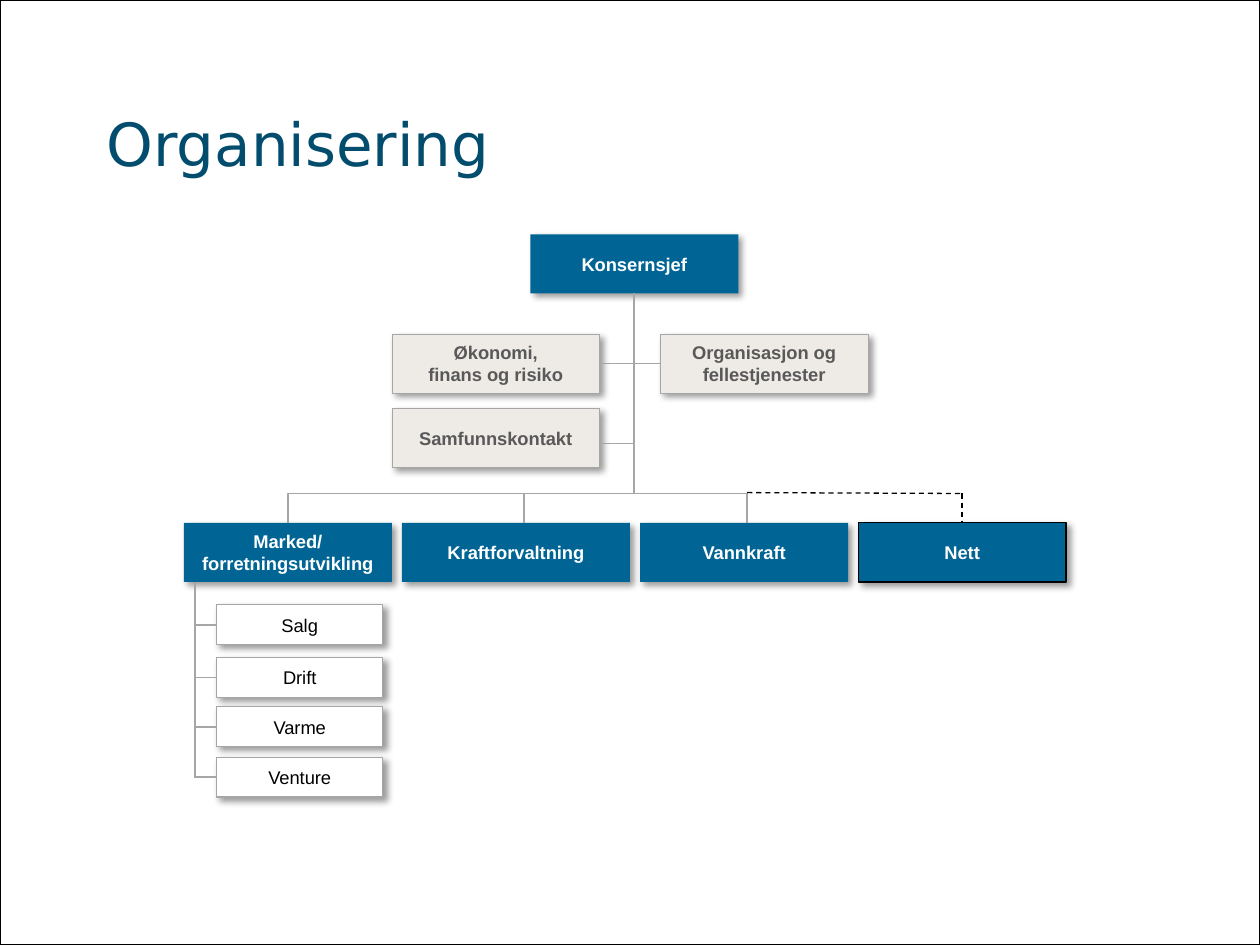
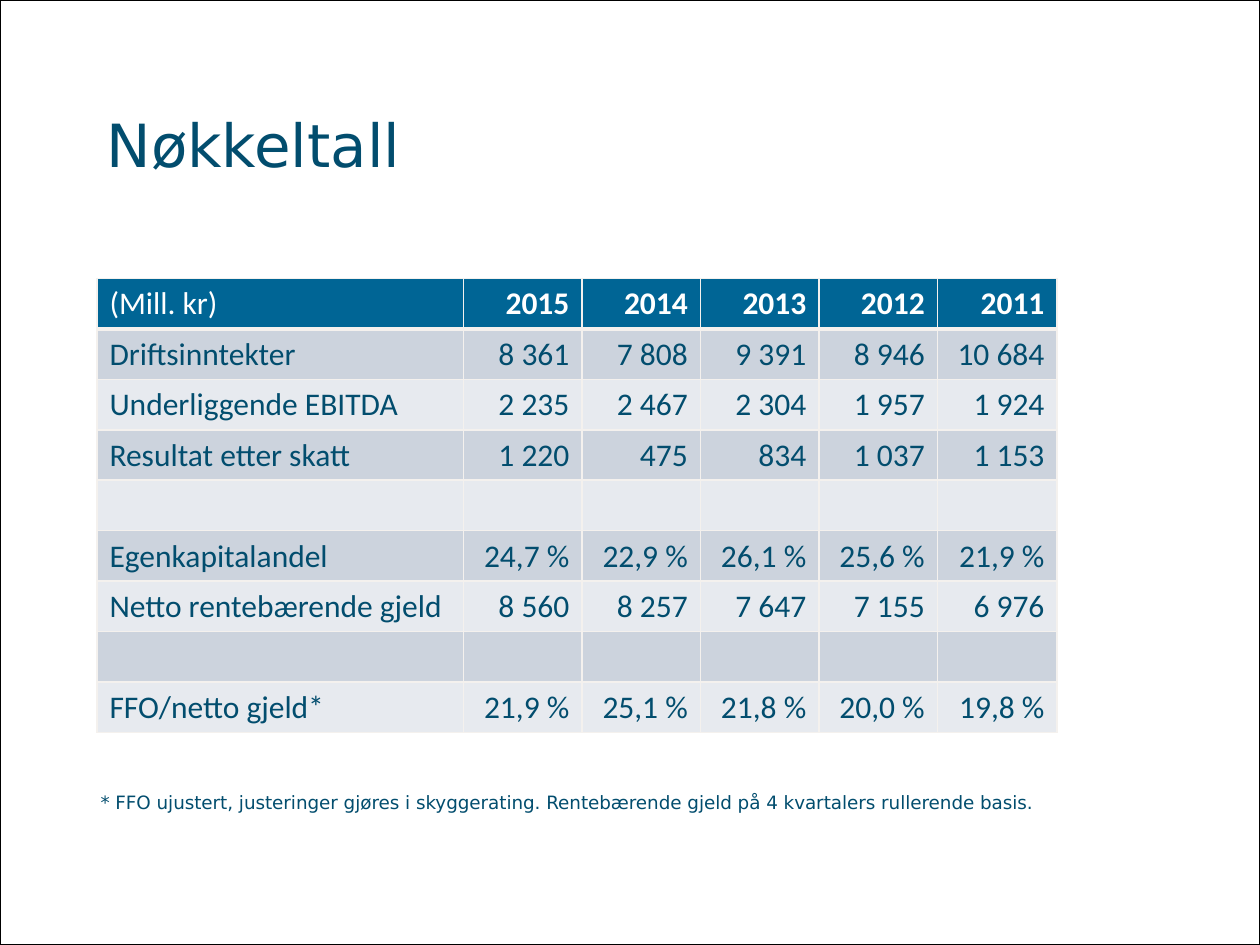
import pptx
import pptx.dml.color
import pptx.enum.dml
import pptx.enum.shapes
import pptx.enum.text
import pptx.oxml
import pptx.oxml.ns
import pptx.util

Pt = pptx.util.Pt
ALIGN = pptx.enum.text.PP_ALIGN
MIDDLE = pptx.enum.text.MSO_ANCHOR.MIDDLE
RECT = pptx.enum.shapes.MSO_SHAPE.RECTANGLE
KIND = pptx.enum.shapes.MSO_CONNECTOR
DASH = pptx.enum.dml.MSO_LINE.DASH
NS = pptx.oxml.ns.nsdecls("a")

BLUE, NAVY, WHITE, BLACK = "006595", "024D6E", "FFFFFF", "000000"
SAND, GREY, SLATE = "EEEBE6", "A6A6A6", "595959"
EDGE, BANDS = "F4F1EE", ("E7EAEF", "CCD3DD")
HEAD, BODY, CELL = "DejaVu Sans", "Arial", "Calibri"
TOP, LEFT, BOTTOM, RIGHT = range(4)

WIDE, HIGH, GAP = 118.8, 33.8, 5.8
RAIL = 111.6
BAR = 282

UNITS = [("Marked/\vforretningsutvikling", WIDE), ("Kraftforvaltning", 130.3),
         ("Vannkraft", WIDE), ("Nett", WIDE)]
FIRMS = [("Salg", 345.6), ("Drift", 375.8), ("Varme", 403.9), ("Venture", 432.7)]
FIGURES = [
    ["(Mill. kr)", "2015", "2014", "2013", "2012", "2011"],
    ["Driftsinntekter", "8 361", "7 808", "9 391", "8 946", "10 684"],
    ["Underliggende EBITDA", "2 235", "2 467", "2 304", "1 957", "1 924"],
    ["Resultat etter skatt", "1 220", "475", "834", "1 037", "1 153"],
    [""] * 6,
    ["Egenkapitalandel", "24,7 %", "22,9 %", "26,1 %", "25,6 %", "21,9 %"],
    ["Netto rentebærende gjeld", "8 560", "8 257", "7 647", "7 155", "6 976"],
    [""] * 6,
    ["FFO/netto gjeld*", "21,9 %", "25,1 %", "21,8 %", "20,0 %", "19,8 %"],
]
NOTE = ("* FFO ujustert, justeringer gjøres i skyggerating. "
        "Rentebærende gjeld på 4 kvartalers rullerende basis.")


def color(code):
    return pptx.dml.color.RGBColor.from_string(code)


def paint(fill, code):
    fill.solid()
    fill.fore_color.rgb = color(code)


def write(frame, text, size, font, code, bold=False, align=ALIGN.LEFT):
    """Fill a text frame: newline starts a paragraph, \\v breaks a line."""
    for i, part in enumerate(text.split("\n")):
        para = frame.add_paragraph() if i else frame.paragraphs[0]
        para.alignment = align
        for j, line in enumerate(part.split("\v")):
            if j:
                para.add_line_break()
            if line:
                run = para.add_run()
                run.text = line
                run.font.size = Pt(size)
                run.font.name = font
                run.font.bold = bold
                run.font.color.rgb = color(code)


def label(slide, text, x, y, w, h, size, wrap=True):
    box = slide.shapes.add_textbox(Pt(x), Pt(y), Pt(w), Pt(h))
    box.text_frame.word_wrap = wrap
    write(box.text_frame, text, size, HEAD, NAVY)
    return box


def start(deck, title, y, h):
    """Add a slide with the shared frame and title."""
    slide = deck.slides.add_slide(deck.slide_layouts[6])
    frame = slide.shapes.add_shape(RECT, 0, 0, deck.slide_width, deck.slide_height)
    frame.shadow.inherit = False
    frame.fill.background()
    frame.line.color.rgb = color(BLACK)
    frame.line.width = Pt(1)
    label(slide, title, 54, y, 612, h, 34).text_frame.vertical_anchor = MIDDLE
    return slide


def shade(shape):
    """Give a shape a soft drop shadow."""
    shape.shadow.inherit = False
    spot = shape._element.spPr.find(pptx.oxml.ns.qn("a:effectLst"))
    spot.append(pptx.oxml.parse_xml(
        f'<a:outerShdw {NS} blurRad="{Pt(4)}" dist="{Pt(3)}" dir="2700000" '
        f'algn="tl" rotWithShape="0"><a:srgbClr val="{BLACK}">'
        '<a:alpha val="40000"/></a:srgbClr></a:outerShdw>'))


def card(slide, text, x, y, w=WIDE, h=HIGH, fill=BLUE, ink=WHITE,
         edge=None, thick=0.75, bold=True):
    box = slide.shapes.add_shape(RECT, Pt(x), Pt(y), Pt(w), Pt(h))
    shade(box)
    paint(box.fill, fill)
    if edge:
        box.line.color.rgb = color(edge)
        box.line.width = Pt(thick)
    else:
        box.line.fill.background()
    box.text_frame.word_wrap = True
    box.text_frame.vertical_anchor = MIDDLE
    write(box.text_frame, text, 10.5, BODY, ink, bold, ALIGN.CENTER)
    return box


def link(slide, x1, y1, x2, y2, head=None, tail=None, dashed=False, kind=KIND.STRAIGHT):
    """Draw a line; head and tail are (box, side) pairs to join."""
    line = slide.shapes.add_connector(kind, Pt(x1), Pt(y1), Pt(x2), Pt(y2))
    line.line.color.rgb = color(BLACK if dashed else GREY)
    line.line.width = Pt(0.75 if dashed else 1)
    if dashed:
        line.line.dash_style = DASH
    props = line._element.spPr
    props.append(pptx.oxml.parse_xml(f"<a:effectLst {NS}/>"))
    if kind == KIND.ELBOW:
        props.find(pptx.oxml.ns.qn("a:prstGeom")).set("prst", "bentConnector2")
    if head:
        line.begin_connect(*head)
    if tail:
        line.end_connect(*tail)


def chart(slide):
    """Draw the organisation chart."""
    boss = card(slide, "Konsernsjef", 303.1, 133.9)
    staff = [card(slide, text, x, y, fill=SAND, ink=SLATE, edge=GREY, thick=0.25)
             for text, x, y in [("Økonomi,\nfinans og risiko", 223.9, 190.8),
                                ("Organisasjon og\nfellestjenester", 377.3, 190.8),
                                ("Samfunnskontakt", 223.9, 233.3)]]
    x, y = 105.1, 298.8
    units = []
    for text, wide in UNITS:
        edge = BLACK if text == "Nett" else None
        units.append(card(slide, text, x, y, wide, edge=edge))
        x += wide + GAP

    mid = 362.5
    link(slide, mid, 167.7, mid, BAR, head=(boss, BOTTOM))
    link(slide, 342.7, 207.7, 377.3, 207.7, (staff[0], RIGHT), (staff[1], LEFT))
    link(slide, 342.7, 253.4, mid, 253.4)
    link(slide, 427, BAR, 164.5, y, kind=KIND.ELBOW)
    for drop in (299.5, 427):
        link(slide, drop, BAR, drop, y)
    link(slide, 427, BAR - 0.5, 549.8, BAR, dashed=True)
    link(slide, 549.8, BAR, 549.8, y, tail=(units[-1], TOP), dashed=True)

    tall = 22.8
    for text, y in FIRMS:
        firm = card(slide, text, 123.8, y, 95, tall, WHITE, BLACK, GREY, bold=False)
        level = y + tall / 2
        link(slide, RAIL - 0.7, level, 123.8, level, tail=(firm, LEFT))
    link(slide, RAIL, 332.6, RAIL, level)


def rule(cell, side, width):
    cell._tc.get_or_add_tcPr().append(pptx.oxml.parse_xml(
        f'<a:ln{side} {NS} w="{Pt(width)}"><a:solidFill>'
        f'<a:srgbClr val="{EDGE}"/></a:solidFill></a:ln{side}>'))


def table(slide):
    """Draw the key figures."""
    wide = [209.5] + [67.7] * 4 + [68.4]
    tall = 28.8
    grid = slide.shapes.add_table(
        len(FIGURES), len(wide), Pt(55.4), Pt(159.1),
        Pt(sum(wide)), Pt(tall * len(FIGURES))).table
    for col, width in zip(grid.columns, wide):
        col.width = Pt(width)
    for r, row in enumerate(FIGURES):
        grid.rows[r].height = Pt(tall)
        for c, text in enumerate(row):
            cell = grid.cell(r, c)
            for side, width in (("L", 1), ("R", 1), ("T", 3 if r == 1 else 1),
                                ("B", 1 if r else 3)):
                rule(cell, side, width)
            paint(cell.fill, BANDS[r % 2] if r else BLUE)
            write(cell.text_frame, text, 18, CELL, NAVY if r else WHITE,
                  r == 0 and c > 0, ALIGN.RIGHT if c else ALIGN.LEFT)


def main():
    deck = pptx.Presentation()
    deck.slide_width, deck.slide_height = Pt(720), Pt(540)
    chart(start(deck, "Organisering", 50.4, 61.9))
    facts = start(deck, "Nøkkeltall", 37.4, 90)
    table(facts)
    label(facts, NOTE, 50.4, 448.6, 564.5, 20.2, 10.5, wrap=False)
    deck.save("out.pptx")


if __name__ == "__main__":
    main()
